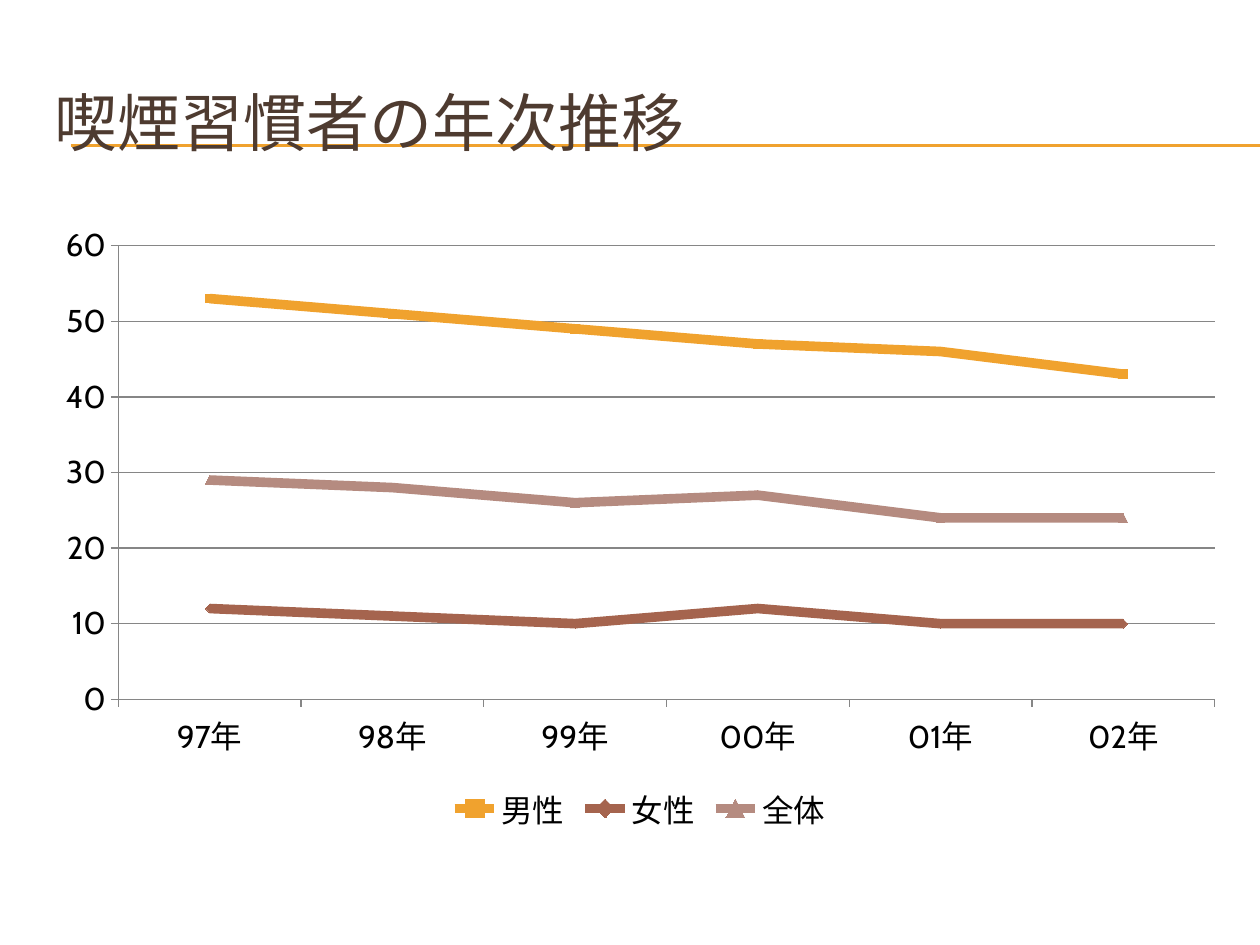
"""Build a slide with a line chart of smoking rates by year."""
from pptx import Presentation
from pptx.chart.data import CategoryChartData
from pptx.dml.color import RGBColor
from pptx.enum.chart import XL_CHART_TYPE, XL_LEGEND_POSITION, XL_MARKER_STYLE, XL_TICK_MARK
from pptx.enum.shapes import MSO_CONNECTOR
from pptx.enum.text import MSO_ANCHOR, MSO_AUTO_SIZE, PP_ALIGN
from pptx.oxml.ns import qn
from pptx.util import Inches, Pt
from lxml.etree import SubElement

HEADING = "喫煙習慣者の年次推移"
YEARS = ["97年", "98年", "99年", "00年", "01年", "02年"]
GROUPS = [
    ("男性", [53, 51, 49, 47, 46, 43], "male", XL_MARKER_STYLE.SQUARE),
    ("女性", [12, 11, 10, 12, 10, 10], "female", XL_MARKER_STYLE.DIAMOND),
    ("全体", [29, 28, 26, 27, 24, 24], "total", XL_MARKER_STYLE.TRIANGLE),
]
THEME = {
    "font": "Cabin",
    "heading_size": Pt(36),
    "chart_size": Pt(18),
    "heading": RGBColor.from_string("4E3B30"),
    "text": RGBColor.from_string("000000"),
    "axis": RGBColor.from_string("868686"),
    "rule": RGBColor.from_string("F0A22E"),
    "male": RGBColor.from_string("F0A22E"),
    "female": RGBColor.from_string("A5644E"),
    "total": RGBColor.from_string("B58B80"),
}
RULE_HEIGHTS = [1.15, 1.16]
LEFT, WIDTH = Inches(0.33), Inches(9.5)


def style_font(font, size, color):
    font.name = THEME["font"]
    font.size = size
    font.bold = False
    font.color.rgb = color


def add_rules(slide):
    for height in RULE_HEIGHTS:
        rule = slide.shapes.add_connector(
            MSO_CONNECTOR.STRAIGHT, Inches(0.56), Inches(height), Inches(10), Inches(height))
        rule.line.color.rgb = THEME["rule"]
        rule.line.width = Pt(0.75)
        SubElement(rule._element.spPr, qn("a:effectLst"))


def add_heading(slide):
    heading = slide.shapes.title
    heading.left, heading.top, heading.width, heading.height = LEFT, Inches(0.5), WIDTH, Inches(0.92)
    frame = heading.text_frame
    frame.auto_size = MSO_AUTO_SIZE.NONE
    frame.vertical_anchor = MSO_ANCHOR.MIDDLE
    paragraph = frame.paragraphs[0]
    paragraph.alignment = PP_ALIGN.LEFT
    run = paragraph.add_run()
    run.text = HEADING
    style_font(run.font, THEME["heading_size"], THEME["heading"])
    slide.shapes._spTree.append(heading._element)


def add_trend(slide):
    rates = CategoryChartData()
    rates.categories = YEARS
    for name, values, *_ in GROUPS:
        rates.add_series(name, values)
    chart = slide.shapes.add_chart(
        XL_CHART_TYPE.LINE_MARKERS, LEFT, Inches(1.7), WIDTH, Inches(4.95), rates).chart
    style_font(chart.font, THEME["chart_size"], THEME["text"])
    chart.has_title = False
    chart.has_legend = True
    chart.legend.position = XL_LEGEND_POSITION.BOTTOM
    chart.legend.include_in_layout = False
    rate_axis = chart.value_axis
    rate_axis.minimum_scale, rate_axis.maximum_scale, rate_axis.major_unit = 0, 60, 10
    rate_axis.has_major_gridlines = True
    for axis in (chart.category_axis, rate_axis):
        axis.major_tick_mark = XL_TICK_MARK.OUTSIDE
        axis.minor_tick_mark = XL_TICK_MARK.NONE
    for part in (chart.category_axis, rate_axis, rate_axis.major_gridlines):
        part.format.line.color.rgb = THEME["axis"]
        part.format.line.width = Pt(0.75)
    plot = chart.plots[0]
    plot.vary_by_categories = False
    for group, (_, _, color, marker) in zip(plot.series, GROUPS):
        group.smooth = False
        group.format.line.color.rgb = THEME[color]
        group.format.line.width = Pt(5.5)
        group.marker.style = marker
        group.marker.size = 5
        group.marker.format.fill.solid()
        group.marker.format.fill.fore_color.rgb = THEME[color]
        group.marker.format.line.color.rgb = THEME[color]


def main():
    deck = Presentation()
    deck.slide_width, deck.slide_height = Inches(10), Inches(7.5)
    slide = deck.slides.add_slide(deck.slide_layouts.get_by_name("Title Only"))
    add_rules(slide)
    add_heading(slide)
    add_trend(slide)
    deck.save("out.pptx")


if __name__ == "__main__":
    main()
